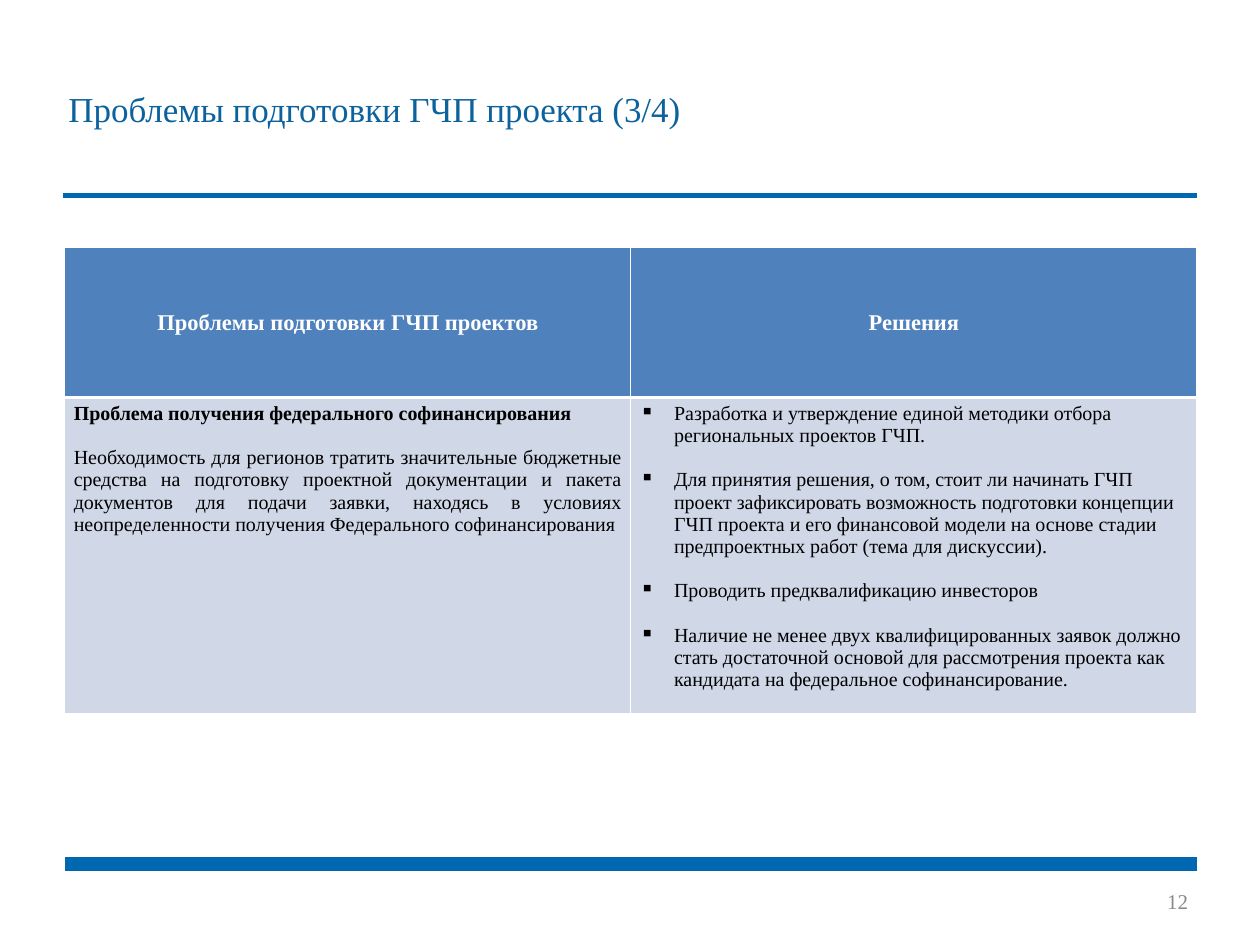
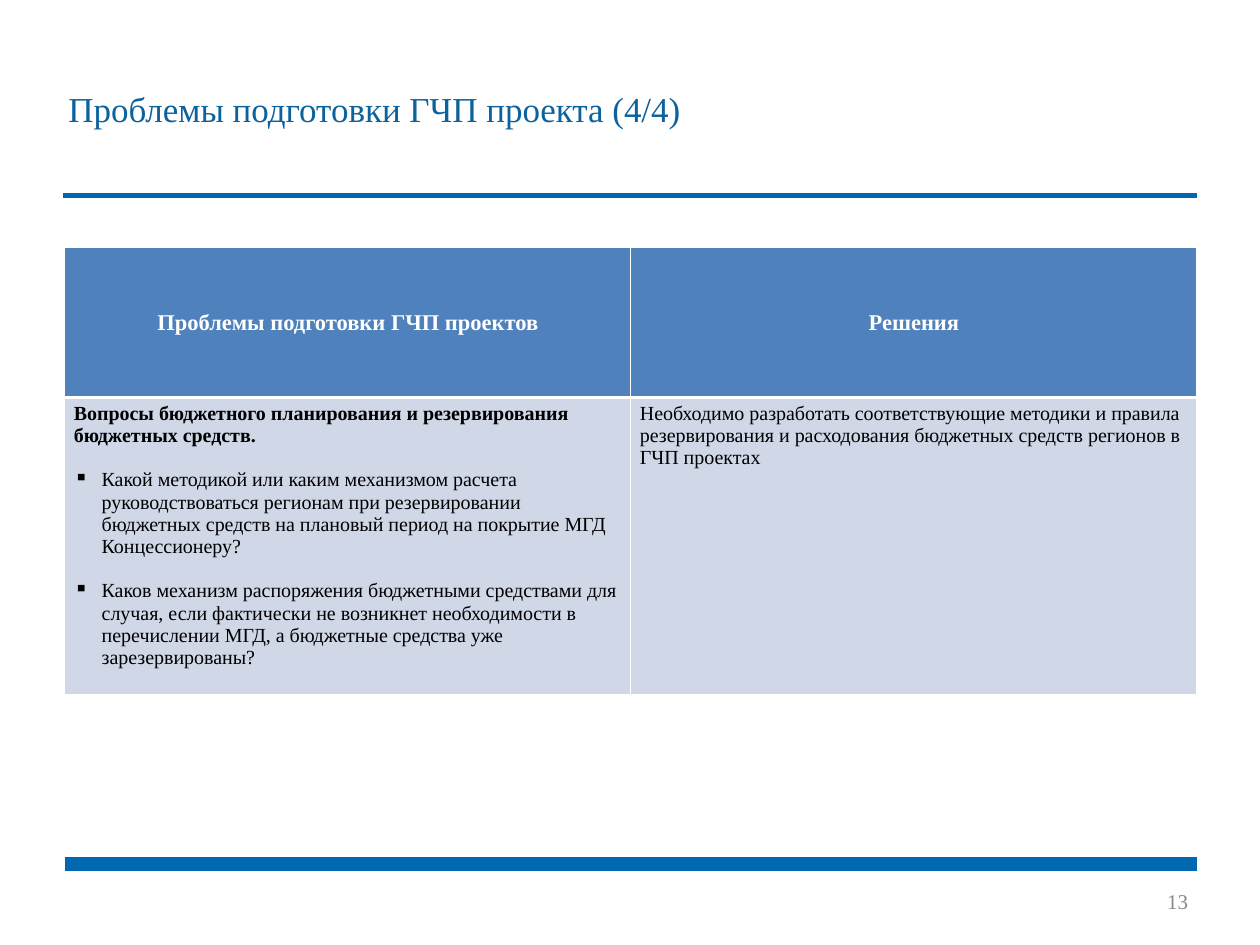
from dataclasses import dataclass

from lxml.etree import SubElement
from pptx import Presentation
from pptx.dml.color import RGBColor
from pptx.enum.shapes import MSO_CONNECTOR, MSO_SHAPE
from pptx.enum.text import MSO_ANCHOR, PP_ALIGN
from pptx.oxml.ns import qn
from pptx.util import Inches, Pt

WHITE = RGBColor(0xFF, 0xFF, 0xFF)
BLACK = RGBColor(0x00, 0x00, 0x00)
BAND_BLUE = RGBColor(0x00, 0x68, 0xB1)
TITLE_BLUE = RGBColor(0x0B, 0x62, 0x9D)
HEADER_BLUE = RGBColor(0x4F, 0x81, 0xBD)
BODY_BLUE = RGBColor(0xD0, 0xD8, 0xE8)
NUMBER_GRAY = RGBColor(0x89, 0x89, 0x89)

FONT = "Times New Roman"
BODY_GAP = Pt(17.8)
LEFT, RIGHT = Inches(0.72), Inches(13.3)
HEADERS = ("Проблемы подготовки ГЧП проектов", "Решения")
ROW_HEIGHTS = (Inches(1.67), Inches(3.3))


@dataclass(frozen=True)
class Band:
    """A horizontal line across the slide."""
    left: int
    top: int
    weight: float


@dataclass(frozen=True)
class Item:
    """A paragraph of a table cell; a hanging indent gives it a bullet."""
    text: str
    bold: bool = False
    align: PP_ALIGN = PP_ALIGN.LEFT
    indent: int = 0


@dataclass(frozen=True)
class Topic:
    """The content of one slide."""
    number: int
    title: str
    problems: tuple[Item, ...]
    solutions: tuple[Item, ...]


BANDS = (Band(LEFT, Inches(9.6), 10.5), Band(Inches(0.7), Inches(2.17), 4))
WIDE_INDENT, NARROW_INDENT = Inches(0.38), Inches(0.31)

TOPICS = (
    Topic(
        12,
        "Проблемы подготовки ГЧП проекта (3/4)",
        (
            Item("Проблема получения федерального софинансирования", bold=True),
            Item("Необходимость для регионов тратить значительные бюджетные средства на "
                 "подготовку проектной документации и пакета документов для подачи заявки, "
                 "находясь в условиях неопределенности получения Федерального "
                 "софинансирования", align=PP_ALIGN.JUSTIFY),
        ),
        (
            Item("Разработка и утверждение единой методики отбора региональных проектов ГЧП.",
                 indent=WIDE_INDENT),
            Item("Для принятия решения, о том, стоит ли начинать ГЧП проект зафиксировать "
                 "возможность подготовки концепции ГЧП проекта и его финансовой модели на "
                 "основе стадии предпроектных работ (тема для дискуссии).",
                 indent=WIDE_INDENT),
            Item("Проводить предквалификацию инвесторов", indent=WIDE_INDENT),
            Item("Наличие не менее двух квалифицированных заявок должно стать достаточной "
                 "основой для рассмотрения проекта как кандидата на федеральное "
                 "софинансирование.", indent=WIDE_INDENT),
        ),
    ),
    Topic(
        13,
        "Проблемы подготовки ГЧП проекта (4/4)",
        (
            Item("Вопросы бюджетного планирования и резервирования бюджетных средств.",
                 bold=True),
            Item("Какой методикой или каким механизмом расчета руководствоваться регионам "
                 "при резервировании бюджетных средств на плановый период на покрытие МГД "
                 "Концессионеру?", indent=NARROW_INDENT),
            Item("Каков механизм распоряжения бюджетными средствами для случая, если "
                 "фактически не возникнет необходимости в перечислении МГД, а бюджетные "
                 "средства уже зарезервированы?", indent=NARROW_INDENT),
        ),
        (
            Item("Необходимо разработать соответствующие методики и правила резервирования "
                 "и расходования бюджетных средств регионов в ГЧП проектах"),
        ),
    ),
)


def write(para, text: str, *, size: float, color: RGBColor, bold: bool = False,
          align: PP_ALIGN = PP_ALIGN.LEFT, indent: int = 0) -> None:
    """Fill a paragraph with one formatted span, bulleted when indented."""
    para.alignment = align
    if indent:
        properties = para._p.get_or_add_pPr()
        properties.set("marL", str(indent))
        properties.set("indent", str(-indent))
        SubElement(properties, qn("a:buChar"), char="▪")
    span = para.add_run()
    span.text = text
    span.font.name = FONT
    span.font.size = Pt(size)
    span.font.bold = bold
    span.font.color.rgb = color


def add_band(page, band: Band) -> None:
    """Draw a blue line that ends at the right margin."""
    line = page.shapes.add_connector(MSO_CONNECTOR.STRAIGHT, band.left, band.top,
                                     RIGHT, band.top)
    line.line.color.rgb = BAND_BLUE
    line.line.width = Pt(band.weight)
    SubElement(line._element.spPr, qn("a:effectLst"))


def add_number(page, number: int) -> None:
    """Put the page number under the lower band."""
    width = Inches(3.65)
    box = page.shapes.add_textbox(RIGHT - width, Inches(9.73), width, Inches(0.56))
    box.text_frame.word_wrap = True
    box.text_frame.vertical_anchor = MSO_ANCHOR.MIDDLE
    write(box.text_frame.paragraphs[0], str(number), size=16.8, color=NUMBER_GRAY,
          align=PP_ALIGN.RIGHT)


def add_title(page, title: str) -> None:
    """Put the title in a white box above the upper band."""
    box = page.shapes.add_shape(MSO_SHAPE.RECTANGLE, LEFT, Inches(0.33),
                                Inches(9.5), Inches(1.75))
    box.shadow.inherit = False
    box.fill.solid()
    box.fill.fore_color.rgb = WHITE
    box.line.fill.background()
    frame = box.text_frame
    frame.word_wrap = True
    frame.vertical_anchor = MSO_ANCHOR.MIDDLE
    frame.margin_left = frame.margin_right = Inches(0.04)
    frame.margin_top = frame.margin_bottom = Inches(0.02)
    write(frame.paragraphs[0], title, size=28, color=TITLE_BLUE)


def style_cell(cell, *, fill: RGBColor, anchor: MSO_ANCHOR, top: float = 1,
               bottom: float = 1) -> None:
    """Give a cell white borders, a fill and a vertical anchor."""
    properties = cell._tc.get_or_add_tcPr()
    for side, weight in (("L", 1), ("R", 1), ("T", top), ("B", bottom)):
        border = SubElement(properties, qn(f"a:ln{side}"), w=str(Pt(weight)))
        solid = SubElement(border, qn("a:solidFill"))
        SubElement(solid, qn("a:srgbClr"), val=str(WHITE))
    cell.fill.solid()
    cell.fill.fore_color.rgb = fill
    cell.vertical_anchor = anchor


def add_comparison(page, topic: Topic) -> None:
    """Draw the table of problems and solutions."""
    frame = page.shapes.add_table(2, len(HEADERS), LEFT, Inches(2.75), RIGHT - LEFT,
                                  sum(ROW_HEIGHTS))
    table = frame.table
    table.horz_banding = False
    for row, height in zip(table.rows, ROW_HEIGHTS):
        row.height = height
    for column, (header, items) in enumerate(zip(HEADERS, (topic.problems, topic.solutions))):
        head, body = table.cell(0, column), table.cell(1, column)
        style_cell(head, fill=HEADER_BLUE, anchor=MSO_ANCHOR.MIDDLE, bottom=3)
        write(head.text_frame.paragraphs[0], header, size=18, color=WHITE, bold=True,
              align=PP_ALIGN.CENTER)
        style_cell(body, fill=BODY_BLUE, anchor=MSO_ANCHOR.TOP, top=3)
        for index, item in enumerate(items):
            para = body.text_frame.add_paragraph() if index else body.text_frame.paragraphs[0]
            write(para, item.text, size=16, color=BLACK, bold=item.bold,
                  align=item.align, indent=item.indent)
            if index:
                para.space_before = BODY_GAP


def add_page(deck, topic: Topic) -> None:
    """Build one slide with its shared frame and its table."""
    page = deck.slides.add_slide(deck.slide_layouts[6])
    for band in BANDS:
        add_band(page, band)
    add_number(page, topic.number)
    add_title(page, topic.title)
    add_comparison(page, topic)


def main() -> None:
    """Build the deck and save it."""
    deck = Presentation()
    deck.slide_width = Inches(14)
    deck.slide_height = Inches(10.5)
    for topic in TOPICS:
        add_page(deck, topic)
    deck.save("out.pptx")


if __name__ == "__main__":
    main()
